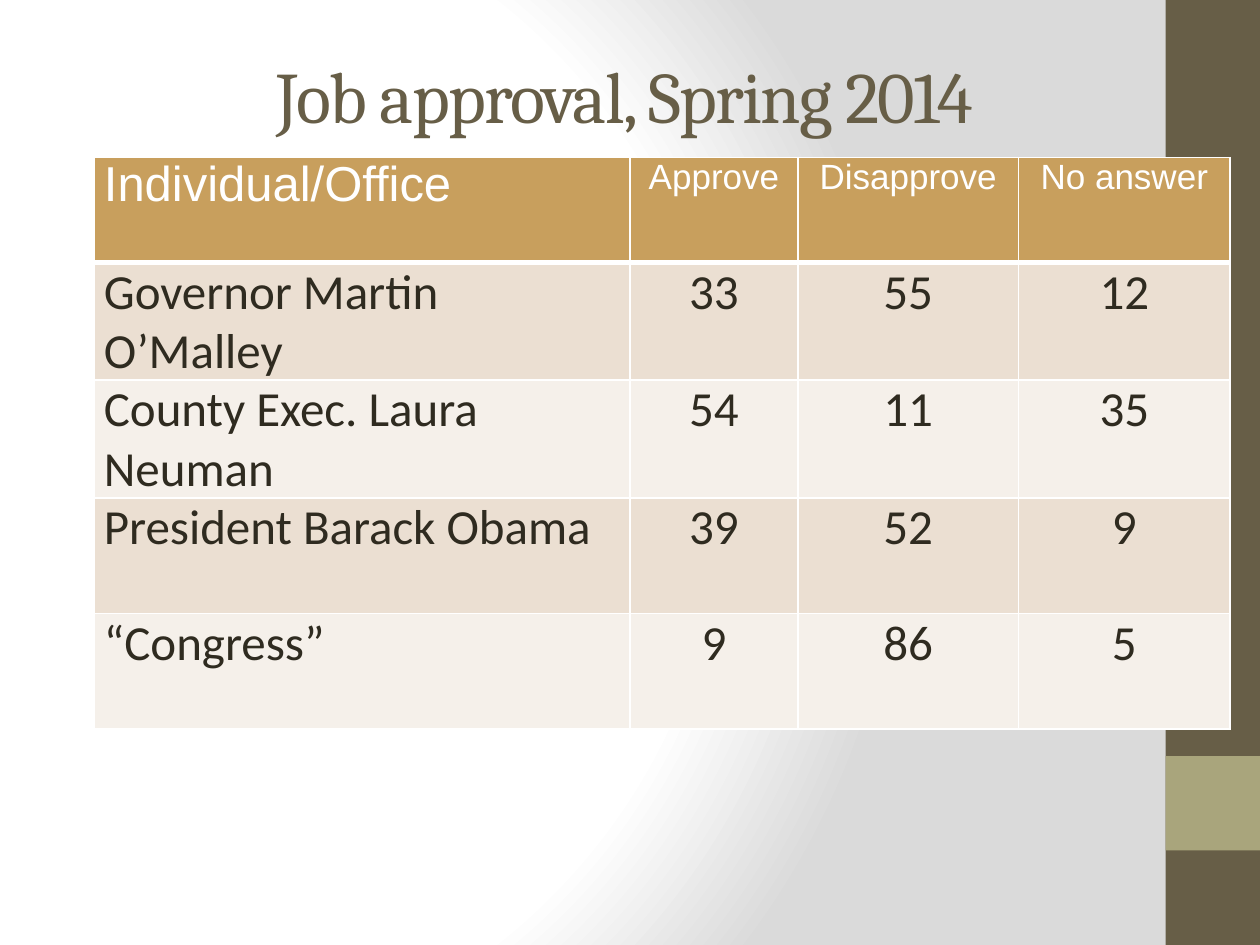
from lxml import etree
from pptx import Presentation
from pptx.dml.color import RGBColor
from pptx.enum.shapes import MSO_SHAPE
from pptx.enum.text import MSO_ANCHOR, PP_ALIGN
from pptx.oxml import parse_xml
from pptx.util import Pt

RECT = MSO_SHAPE.RECTANGLE
LEFT, MID = PP_ALIGN.LEFT, PP_ALIGN.CENTER
TOP, CENTER = MSO_ANCHOR.TOP, MSO_ANCHOR.MIDDLE
A = "http://schemas.openxmlformats.org/drawingml/2006/main"
P = "http://schemas.openxmlformats.org/presentationml/2006/main"

WHITE, BROWN, GREEN, INK = "FFFFFF", "675E47", "A9A57C", "2F2B20"
GOLD, BANDS = "C89F5D", ("EBDFD2", "F5F0EA")

HEADS = ["Individual/Office", "Approve", "Disapprove", "No answer"]
ROWS = [
    ["Governor Martin O’Malley", 33, 55, 12],
    ["County Exec. Laura Neuman", 54, 11, 35],
    ["President Barack Obama", 39, 52, 9],
    ["“Congress”", 9, 86, 5],
]
COLS = [306, 96, 126, 121]
HEAD_H, ROW_H = 60, 66


def color(code):
    return RGBColor.from_string(code)


def write(frame, text, font="Calibri", size=28, ink=INK, align=LEFT, space=None):
    par = frame.paragraphs[0]
    par.alignment = align
    run = par.add_run()
    run.text = str(text)
    run.font.name = font
    run.font.size = Pt(size)
    run.font.bold = False
    run.font.color.rgb = color(ink)
    if space is not None:
        run.font._element.set("spc", str(space))


class Deck:
    def __init__(self, wide, high):
        self.show = Presentation()
        self.show.slide_width, self.show.slide_height = Pt(wide), Pt(high)
        self.slide = self.show.slides.add_slide(self.show.slide_layouts[6])

    def glow(self, stops, focus):
        marks = "".join(
            f'<a:gs pos="{pos * 1000}"><a:srgbClr val="{code}"/></a:gs>'
            for pos, code in stops)
        sides = " ".join(f'{k}="{v * 1000}"' for k, v in zip("ltrb", focus))
        back = parse_xml(
            f'<p:bg xmlns:p="{P}" xmlns:a="{A}"><p:bgPr><a:gradFill rotWithShape="1">'
            f'<a:gsLst>{marks}</a:gsLst><a:path path="circle">'
            f'<a:fillToRect {sides}/></a:path></a:gradFill>'
            '<a:effectLst/></p:bgPr></p:bg>')
        self.slide.element.cSld.insert(0, back)

    def block(self, x, y, w, h, fill):
        box = self.slide.shapes.add_shape(RECT, Pt(x), Pt(y), Pt(w), Pt(h))
        box.shadow.inherit = False
        box.fill.solid()
        box.fill.fore_color.rgb = color(fill)
        box.line.fill.background()

    def label(self, x, y, w, h, text, **form):
        box = self.slide.shapes.add_textbox(Pt(x), Pt(y), Pt(w), Pt(h))
        box.text_frame.word_wrap = True
        box.text_frame.vertical_anchor = CENTER
        write(box.text_frame, text, **form)

    def cell(self, cell, text, fill, foot=1, **form):
        cell.margin_left = cell.margin_right = Pt(5.4)
        cell.margin_top = cell.margin_bottom = 0
        cell.vertical_anchor = TOP
        cell.fill.solid()
        cell.fill.fore_color.rgb = color(fill)
        write(cell.text_frame, text, **form)
        # Borders come before the fill
        props = cell._tc.get_or_add_tcPr()
        for spot, side in enumerate("LRTB"):
            width = foot if side == "B" else 1
            line = etree.Element(f"{{{A}}}ln{side}", w=str(Pt(width)))
            paint = etree.SubElement(line, f"{{{A}}}solidFill")
            etree.SubElement(paint, f"{{{A}}}srgbClr", val=WHITE)
            props.insert(spot, line)

    def table(self, x, y, cols, heads, rows):
        high = HEAD_H + ROW_H * len(rows)
        grid = self.slide.shapes.add_table(
            len(rows) + 1, len(cols), Pt(x), Pt(y), Pt(sum(cols)), Pt(high)).table
        grid.horz_banding = False
        for col, width in zip(grid.columns, cols):
            col.width = Pt(width)
        for n, row in enumerate(grid.rows):
            row.height = Pt(ROW_H if n else HEAD_H)
        for c, text in enumerate(heads):
            self.cell(grid.cell(0, c), text, GOLD, foot=3, font="Arial", ink=WHITE,
                      size=20 if c else 28, align=MID if c else LEFT)
        for r, row in enumerate(rows):
            for c, text in enumerate(row):
                self.cell(grid.cell(r + 1, c), text, BANDS[r % 2],
                          align=MID if c else LEFT)


def main():
    deck = Deck(720, 540)

    # Background and side bar
    deck.glow([(0, WHITE), (75, WHITE), (100, "DADADA")], (20, 50, 100, 50))
    deck.block(666, 0, 54, 540, BROWN)
    deck.block(666, 432, 54, 54, GREEN)

    # Title
    deck.label(42, 30, 630, 48, "Job approval, Spring 2014", font="Cambria",
               size=41.4, ink=BROWN, align=MID, space=-100)

    # Approval table
    deck.table(54, 90, COLS, HEADS, ROWS)

    deck.show.save("out.pptx")


if __name__ == "__main__":
    main()
